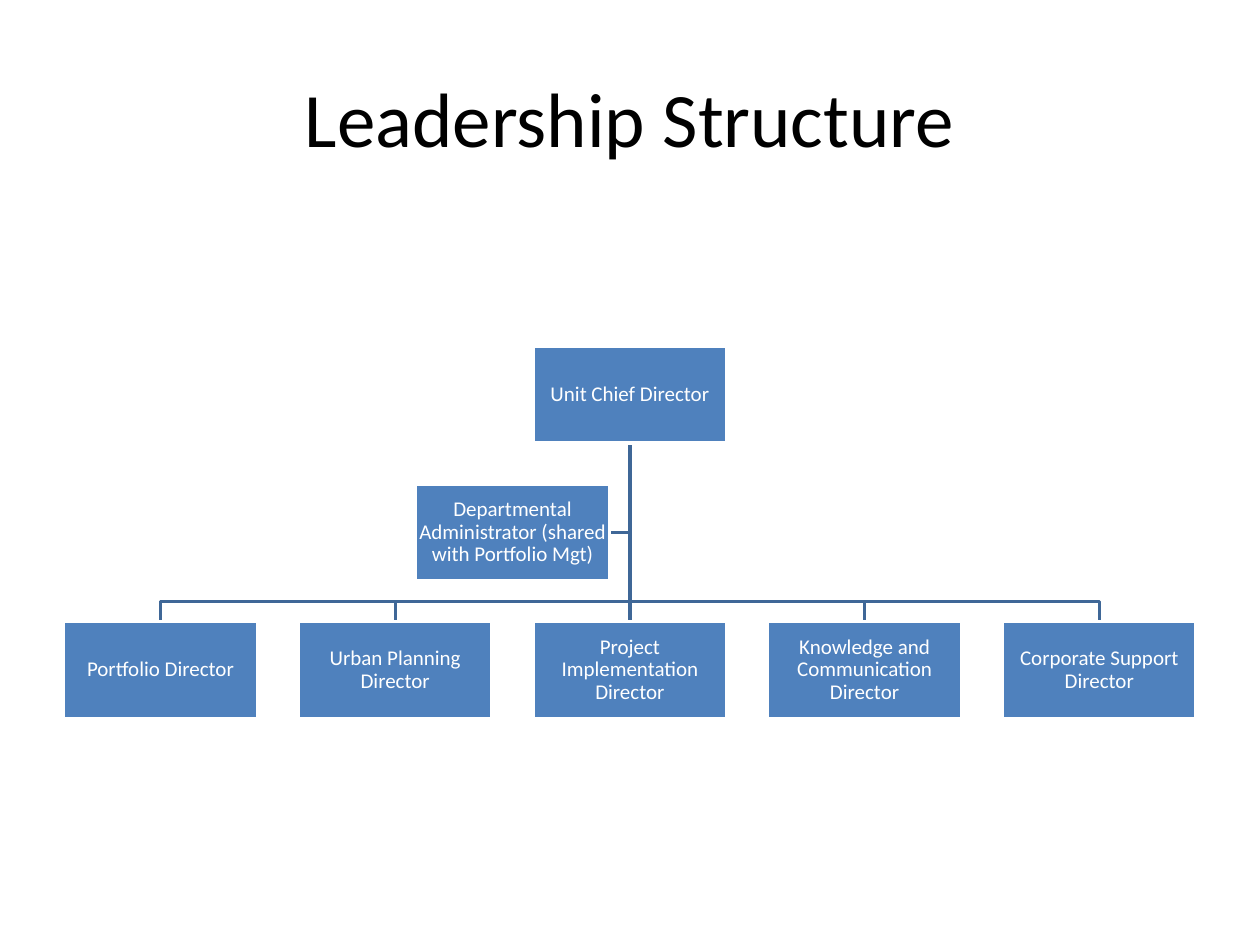
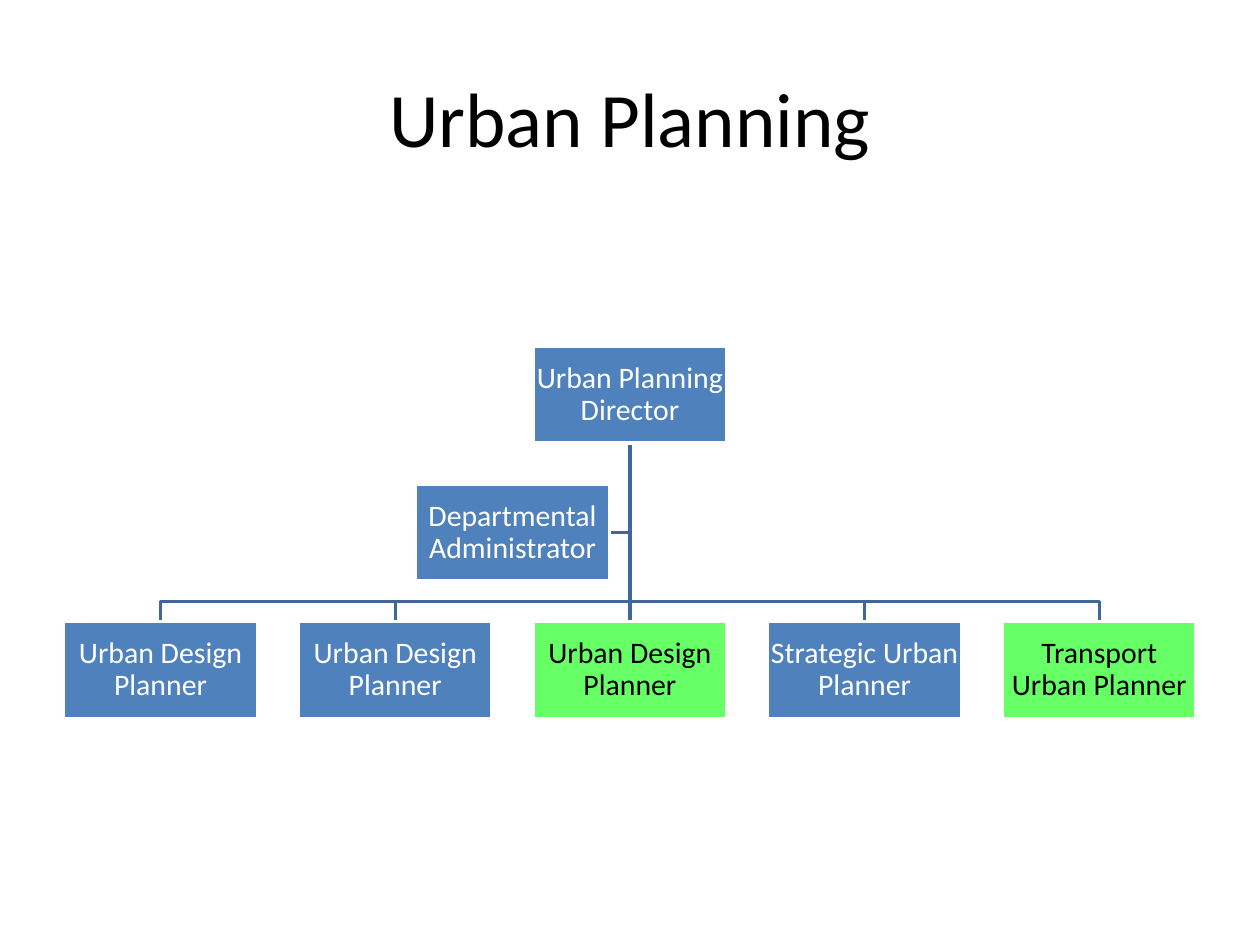
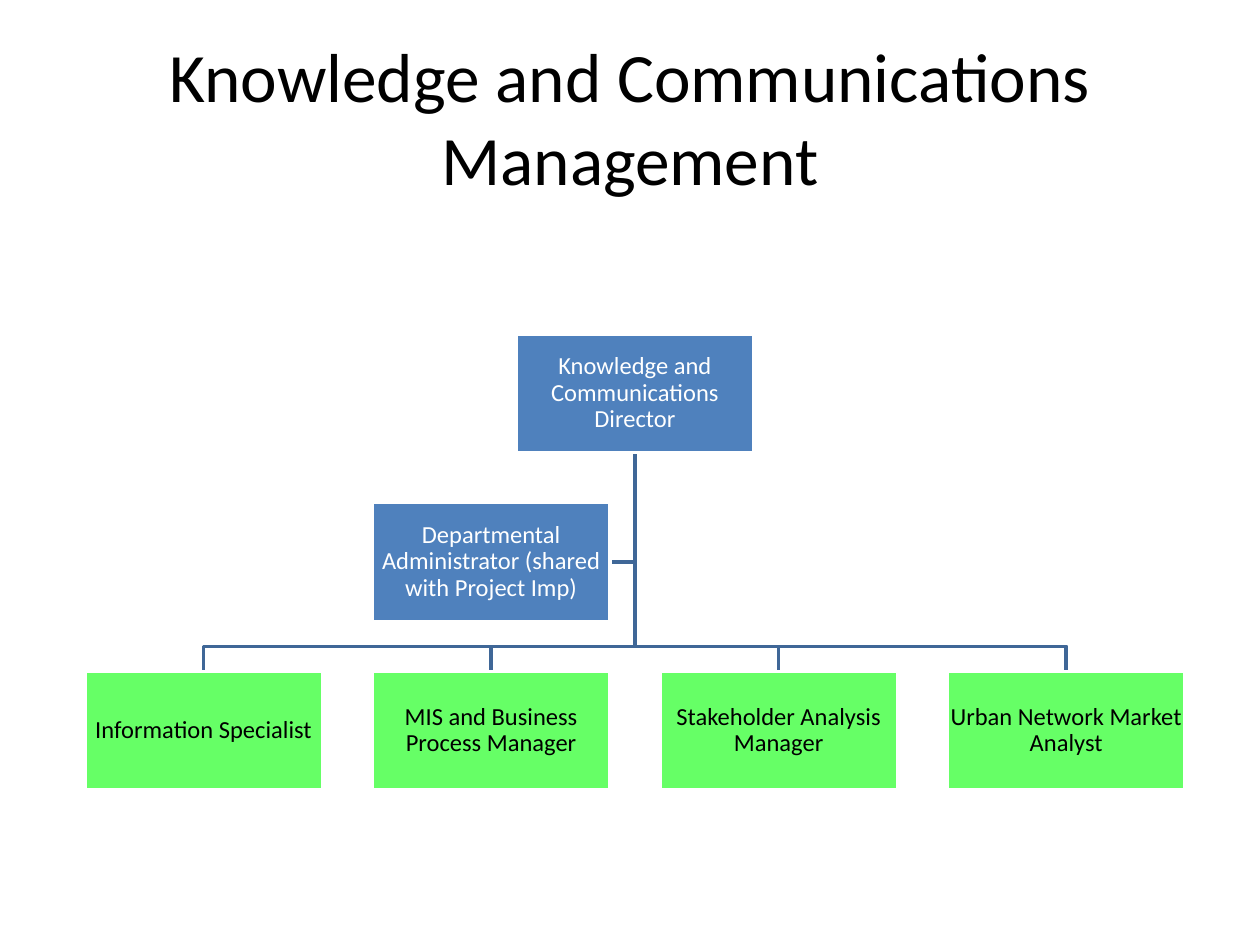
"""Builds three organisation chart slides."""
from dataclasses import dataclass

from lxml import etree
from pptx import Presentation
from pptx import util as u
from pptx.dml.color import RGBColor
from pptx.enum import shapes, text
from pptx.oxml.ns import qn


@dataclass(frozen=True)
class Theme:
    font: str = "Calibri"
    box: str = "4F81BD"
    highlight: str = "66FF66"
    link: str = "3F6797"
    light: str = "FFFFFF"
    dark: str = "000000"
    title_size: float = 44
    long_title_size: float = 39.6
    line_width: float = 2
    line_spacing: float = 0.9
    inset: float = 0.02


@dataclass(frozen=True)
class Chart:
    title: str
    title_size: float
    text_size: float
    center: float
    top: float
    width: float
    chief: str
    assistant: str
    team: tuple
    highlighted: tuple = ()


class Builder:
    """Holds the theme and the current slide, and draws each kind of element."""

    def __init__(self, theme):
        self.theme = theme
        self.deck = Presentation()
        self.deck.slide_width, self.deck.slide_height = u.Cm(25.4), u.Cm(19.05)
        self.page = None

    def new_page(self):
        self.page = self.deck.slides.add_slide(self.deck.slide_layouts[6])

    def label(self, frame, words, size, color):
        frame.word_wrap = True
        frame.vertical_anchor = text.MSO_ANCHOR.MIDDLE
        frame.text = words
        para = frame.paragraphs[0]
        para.alignment = text.PP_ALIGN.CENTER
        span = para.runs[0]
        span.font.name = self.theme.font
        span.font.size = u.Pt(size)
        span.font.color.rgb = RGBColor.from_string(color)
        return para

    def title(self, words, size):
        box = self.page.shapes.add_textbox(u.Cm(1.27), u.Cm(0.76), u.Cm(22.86), u.Cm(3.18))
        self.label(box.text_frame, words, size, self.theme.dark)

    def stroke(self, line, color):
        line.color.rgb = RGBColor.from_string(color)
        line.width = u.Pt(self.theme.line_width)

    def box(self, left, top, width, height, words, size, highlighted=False):
        box = self.page.shapes.add_shape(
            shapes.MSO_SHAPE.RECTANGLE, u.Cm(left), u.Cm(top), u.Cm(width), u.Cm(height))
        box.shadow.inherit = False
        box.fill.solid()
        box.fill.fore_color.rgb = RGBColor.from_string(
            self.theme.highlight if highlighted else self.theme.box)
        self.stroke(box.line, self.theme.light)
        frame = box.text_frame
        frame.margin_left = frame.margin_right = u.Cm(self.theme.inset)
        frame.margin_top = frame.margin_bottom = u.Cm(self.theme.inset)
        color = self.theme.dark if highlighted else self.theme.light
        para = self.label(frame, words, size, color)
        para.line_spacing = self.theme.line_spacing

    def straight_link(self, start, end):
        link = self.page.shapes.add_connector(
            shapes.MSO_CONNECTOR.STRAIGHT, *(u.Cm(value) for value in (*start, *end)))
        self.stroke(link.line, self.theme.link)
        etree.SubElement(link._element.spPr, qn("a:effectLst"))

    def bent_link(self, *points):
        start, *rest = [(u.Cm(x), u.Cm(y)) for x, y in points]
        outline = self.page.shapes.build_freeform(*start)
        outline.add_line_segments(rest, close=False)
        link = outline.convert_to_shape()
        link.shadow.inherit = False
        link.fill.background()
        self.stroke(link.line, self.theme.link)

    def chart(self, chart):
        self.new_page()
        self.title(chart.title, chart.title_size)

        width, center = chart.width, chart.center
        height, gap = width / 2, width * 0.21
        step = width + gap
        chief_bottom = chart.top + height
        assistant_top = chief_bottom + gap
        team_top = assistant_top + height + gap
        bus = team_top - gap / 2
        middle = (len(chart.team) - 1) / 2
        team_centers = [center + (index - middle) * step for index in range(len(chart.team))]

        start = (center, chief_bottom)
        level = assistant_top + height / 2
        self.bent_link(start, (center, level), (center - gap / 2, level))
        for x in team_centers:
            if x == center:
                self.straight_link(start, (x, team_top))
            else:
                self.bent_link(start, (center, bus), (x, bus), (x, team_top))

        self.box(center - width / 2, chart.top, width, height, chart.chief, chart.text_size)
        for index, (x, member) in enumerate(zip(team_centers, chart.team)):
            self.box(x - width / 2, team_top, width, height, member,
                     chart.text_size, index in chart.highlighted)
        self.box(center - gap / 2 - width, assistant_top, width, height,
                 chart.assistant, chart.text_size)


def main():
    theme = Theme()
    wide = dict(title_size=theme.title_size, center=12.7, top=6.98, width=3.91)
    charts = [
        Chart(
            title="Leadership Structure", text_size=12, **wide,
            chief="Unit Chief Director",
            assistant="Departmental Administrator (shared with Portfolio Mgt)",
            team=("Portfolio Director", "Urban Planning Director",
                  "Project Implementation Director",
                  "Knowledge and Communication Director", "Corporate Support Director")),
        Chart(
            title="Urban Planning", text_size=17, **wide,
            chief="Urban Planning Director",
            assistant="Departmental Administrator",
            team=("Urban Design Planner", "Urban Design Planner", "Urban Design Planner",
                  "Strategic Urban Planner", "Transport Urban Planner"),
            highlighted=(2, 4)),
        Chart(
            title="Knowledge and Communications Management",
            title_size=theme.long_title_size, text_size=14,
            center=12.8, top=6.73, width=4.79,
            chief="Knowledge and Communications Director",
            assistant="Departmental Administrator (shared with Project Imp)",
            team=("Information Specialist", "MIS and Business Process Manager",
                  "Stakeholder Analysis Manager", "Urban Network Market Analyst"),
            highlighted=(0, 1, 2, 3)),
    ]
    builder = Builder(theme)
    for chart in charts:
        builder.chart(chart)
    builder.deck.save("out.pptx")


if __name__ == "__main__":
    main()
